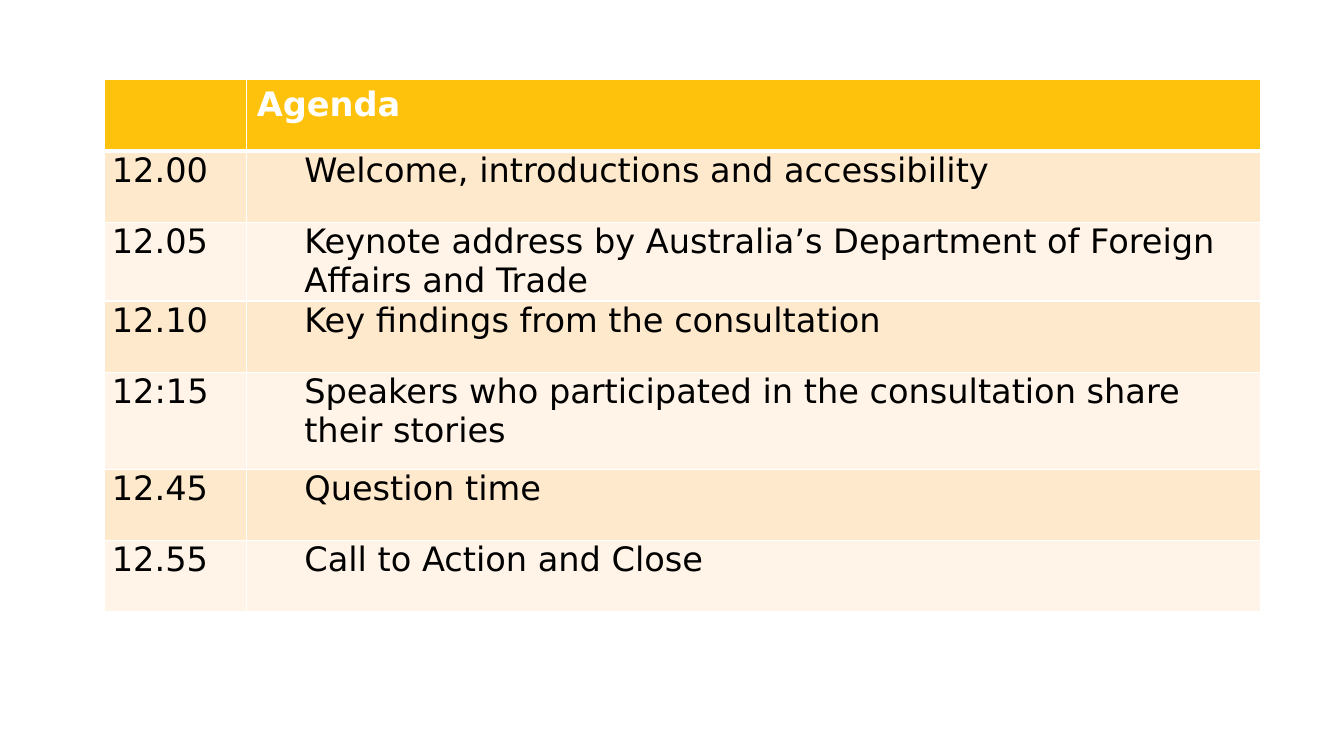
from lxml import etree
from pptx import Presentation
from pptx.dml.color import RGBColor
from pptx.enum.text import MSO_ANCHOR
from pptx.oxml.ns import qn
from pptx.util import Cm, Pt

TOP = MSO_ANCHOR.TOP

WHITE = RGBColor(0xFF, 0xFF, 0xFF)
BLACK = RGBColor(0x00, 0x00, 0x00)
AMBER = RGBColor(0xFF, 0xC2, 0x0C)
PEACH = RGBColor(0xFF, 0xE9, 0xCC)
CREAM = RGBColor(0xFF, 0xF4, 0xE7)

AGENDA = [
    ("12.00", "Welcome, introductions and accessibility"),
    ("12.05", "Keynote address by Australia’s Department of Foreign Affairs and Trade"),
    ("12.10", "Key findings from the consultation"),
    ("12:15", "Speakers who participated in the consultation share their stories"),
    ("12.45", "Question time"),
    ("12.55", "Call to Action and Close"),
]
COLUMN_WIDTHS = (3.58, 25.55)
ROW_HEIGHT = 1.8
SPEAKERS_ROW, SPEAKERS_HEIGHT = 4, 2.44


def write_text(frame, text, color=BLACK, bold=False, indent=0):
    paragraph = frame.paragraphs[0]
    if indent:
        paragraph.level = 1
        properties = paragraph._p.get_or_add_pPr()
        properties.set("marL", str(Cm(indent)))
        properties.set("indent", "0")
    run = paragraph.add_run()
    run.text = text
    run.font.name = "DejaVu Sans"
    run.font.size = Pt(24)
    run.font.bold = bold
    run.font.color.rgb = color


class AgendaSlide:
    """Holds the slide and the border style of its table."""

    def __init__(self, presentation, border=WHITE):
        self.slide = presentation.slides.add_slide(presentation.slide_layouts[6])
        self.border = border

    def table(self, left, top, widths, heights):
        table = self.slide.shapes.add_table(
            len(heights), len(widths), Cm(left), Cm(top),
            Cm(sum(widths)), Cm(sum(heights))).table
        for column, width in zip(table.columns, widths):
            column.width = Cm(width)
        for row, height in zip(table.rows, heights):
            row.height = Cm(height)
        return table

    def cell(self, cell, text, fill, margins=None, top_line=1, bottom_line=1, **text_format):
        cell.fill.solid()
        cell.fill.fore_color.rgb = fill
        cell.vertical_anchor = TOP
        if margins:
            cell.margin_left = cell.margin_right = Cm(margins)
            cell.margin_top = cell.margin_bottom = 0
        self.borders(cell, lnL=1, lnR=1, lnT=top_line, lnB=bottom_line)
        if text:
            write_text(cell.text_frame, text, **text_format)

    def borders(self, cell, **widths):
        properties = cell._tc.get_or_add_tcPr()
        for position, (side, width) in enumerate(widths.items()):
            line = etree.Element(qn(f"a:{side}"), w=str(Pt(width)))
            fill = etree.SubElement(line, qn("a:solidFill"))
            etree.SubElement(fill, qn("a:srgbClr"), val=str(self.border))
            properties.insert(position, line)


def main():
    presentation = Presentation()
    presentation.slide_width = Cm(33.87)
    presentation.slide_height = Cm(19.05)
    agenda = AgendaSlide(presentation)

    # Table grid
    heights = [ROW_HEIGHT] * (len(AGENDA) + 1)
    heights[SPEAKERS_ROW] = SPEAKERS_HEIGHT
    table = agenda.table(2.64, 2.01, COLUMN_WIDTHS, heights)

    # Header row
    for column, heading in enumerate(("", "Agenda")):
        agenda.cell(table.cell(0, column), heading, AMBER,
                    bottom_line=3, color=WHITE, bold=True)

    # Times and sessions, in alternating bands
    for row, (time, session) in enumerate(AGENDA, start=1):
        band = PEACH if row % 2 else CREAM
        top_line = 3 if row == 1 else 1
        agenda.cell(table.cell(row, 0), time, band, margins=0.18, top_line=top_line)
        agenda.cell(table.cell(row, 1), session, band, margins=0.18,
                    top_line=top_line, indent=1.27)

    presentation.save("out.pptx")


if __name__ == "__main__":
    main()
